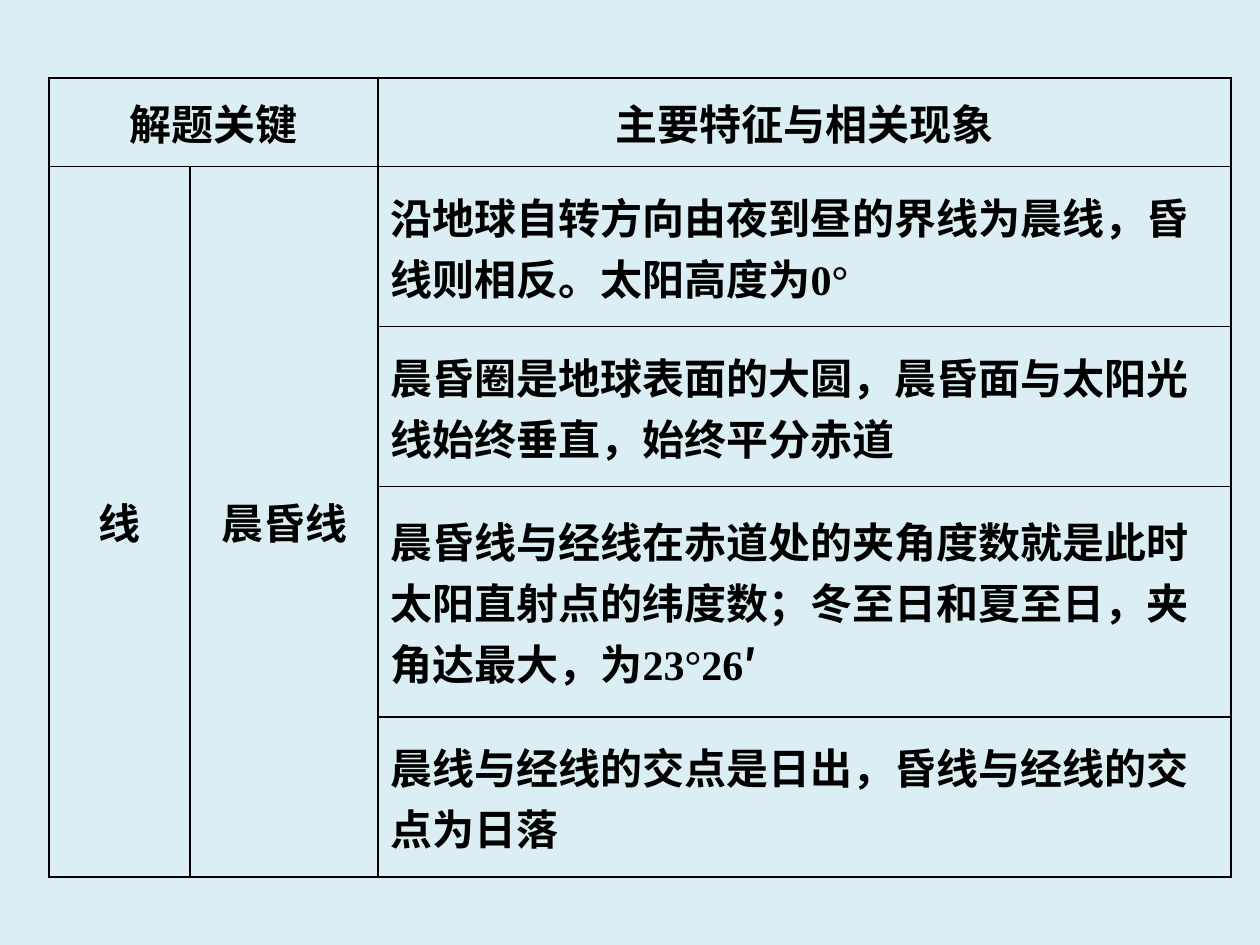
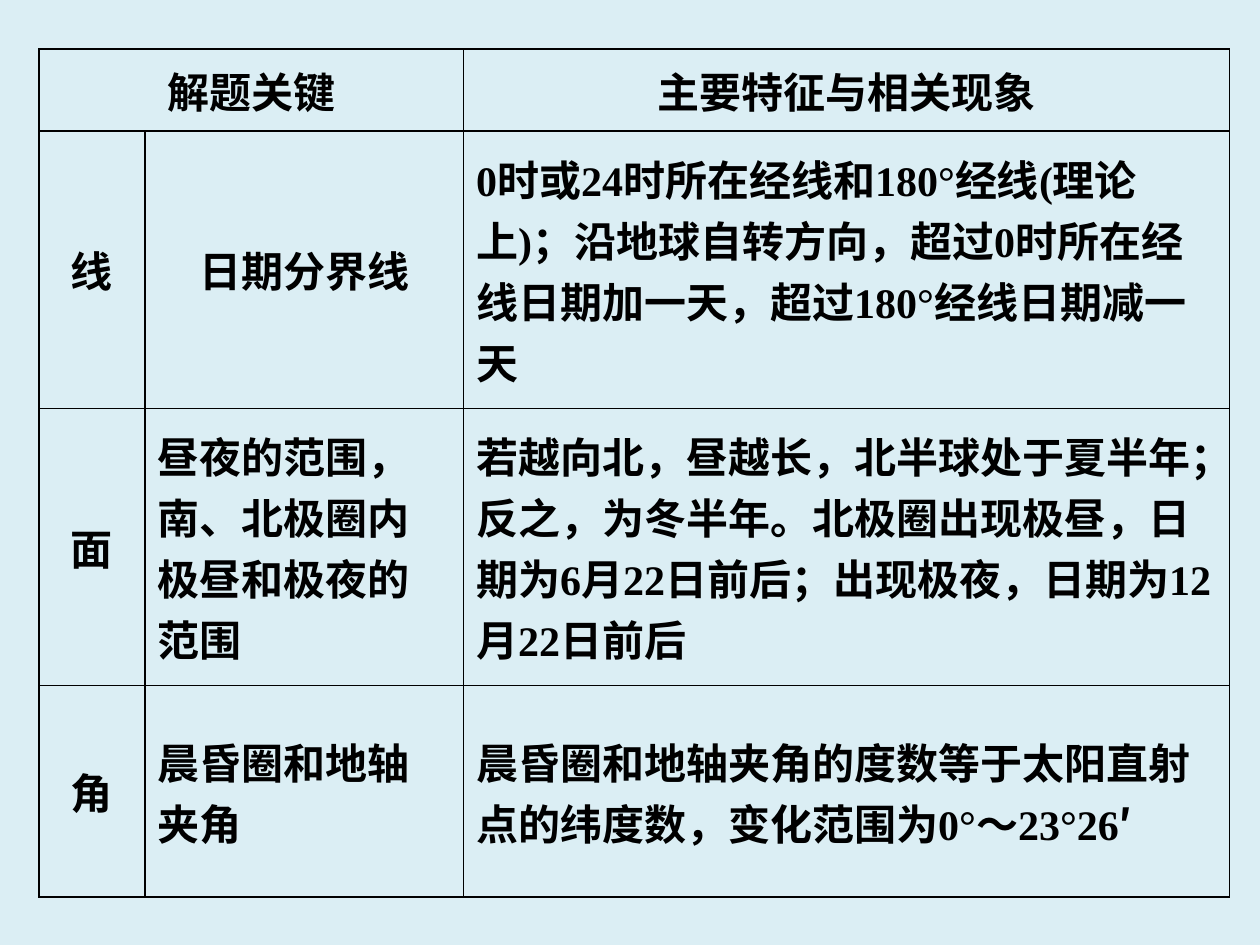
from lxml import etree
from pptx import Presentation
from pptx.dml.color import RGBColor
from pptx.enum.text import MSO_ANCHOR, PP_ALIGN
from pptx.oxml.ns import qn
from pptx.util import Emu, Pt

# Shared look
EMU_PER_PX = 9144  # 100 px to the inch
BACKGROUND = "DBEEF4"
INK = "000000"
LATIN_FONT = "Times New Roman"
CHINESE_FONT = "Noto Sans CJK SC"
TEXT_SIZE = 24
BORDER_WIDTH = 1
LABEL_LENGTH = 5  # body cells up to this many characters are centred labels
PRIME = "′"
CENTER = PP_ALIGN.CENTER
LEFT = PP_ALIGN.LEFT
MIDDLE = MSO_ANCHOR.MIDDLE

# Cells left as None are covered by a merged neighbour
HEADER = ("解题关键", None, "主要特征与相关现象")
HEADER_MERGE = ((0, 0), (0, 1))

TERMINATOR_ROWS = [
    HEADER,
    ("线", "晨昏线", "沿地球自转方向由夜到昼的界线为晨线，昏线则相反。太阳高度为0°"),
    (None, None, "晨昏圈是地球表面的大圆，晨昏面与太阳光线始终垂直，始终平分赤道"),
    (None, None, "晨昏线与经线在赤道处的夹角度数就是此时太阳直射点的纬度数；"
                 "冬至日和夏至日，夹角达最大，为23°26′"),
    (None, None, "晨线与经线的交点是日出，昏线与经线的交点为日落"),
]

DATE_LINE_ROWS = [
    HEADER,
    ("线", "日期分界线", "0时或24时所在经线和180°经线(理论上)；沿地球自转方向，"
                    "超过0时所在经线日期加一天，超过180°经线日期减一天"),
    ("面", "昼夜的范围，南、北极圈内极昼和极夜的范围",
     "若越向北，昼越长，北半球处于夏半年；反之，为冬半年。"
     "北极圈出现极昼，日期为6月22日前后；出现极夜，日期为12月22日前后"),
    ("角", "晨昏圈和地轴夹角",
     "晨昏圈和地轴夹角的度数等于太阳直射点的纬度数，变化范围为0°～23°26′"),
]


def px(length):
    return Emu(length * EMU_PER_PX)


def color(hex_string):
    return RGBColor.from_string(hex_string)


def add_slide(presentation):
    slide = presentation.slides.add_slide(presentation.slide_layouts[6])
    slide.background.fill.solid()
    slide.background.fill.fore_color.rgb = color(BACKGROUND)
    return slide


def set_borders(cell):
    properties = cell._tc.get_or_add_tcPr()
    for side in ("a:lnL", "a:lnR", "a:lnT", "a:lnB"):
        line = etree.SubElement(properties, qn(side), w=str(Pt(BORDER_WIDTH)))
        fill = etree.SubElement(line, qn("a:solidFill"))
        etree.SubElement(fill, qn("a:srgbClr"), val=INK)


def write_text(cell, text, alignment):
    paragraph = cell.text_frame.paragraphs[0]
    paragraph.alignment = alignment
    font = paragraph.font
    font.size = Pt(TEXT_SIZE)
    font.bold = True
    font.color.rgb = color(INK)
    font.name = LATIN_FONT
    defaults = paragraph._p.find(".//" + qn("a:defRPr"))
    etree.SubElement(defaults, qn("a:ea"), typeface=CHINESE_FONT)

    # The prime mark takes the Chinese font
    body, prime, _ = text.partition(PRIME)
    paragraph.add_run().text = body
    if prime:
        run = paragraph.add_run()
        run.text = prime
        run.font.name = CHINESE_FONT


def add_key_table(slide, left, top, widths, heights, rows, merges):
    frame = slide.shapes.add_table(len(heights), len(widths), px(left), px(top),
                                   px(sum(widths)), px(sum(heights)))
    table = frame.table
    table.first_row = False
    table.horz_banding = False
    for column, width in zip(table.columns, widths):
        column.width = px(width)
    for row, height in zip(table.rows, heights):
        row.height = px(height)

    for row_index, texts in enumerate(rows):
        for column_index, text in enumerate(texts):
            cell = table.cell(row_index, column_index)
            set_borders(cell)
            cell.fill.background()
            cell.vertical_anchor = MIDDLE
            if text:
                is_label = row_index == 0 or len(text) <= LABEL_LENGTH
                write_text(cell, text, CENTER if is_label else LEFT)

    for first, last in merges:
        table.cell(*first).merge(table.cell(*last))


def main():
    presentation = Presentation()
    presentation.slide_width = px(1000)
    presentation.slide_height = px(750)

    # Terminator line
    add_key_table(add_slide(presentation), 39, 62, (112, 149, 677),
                  (70, 127, 127, 183, 127), TERMINATOR_ROWS,
                  [HEADER_MERGE, ((1, 0), (4, 0)), ((1, 1), (4, 1))])

    # Date line, day and night areas, angle
    add_key_table(add_slide(presentation), 31, 39, (84, 253, 608),
                  (65, 220, 220, 168), DATE_LINE_ROWS, [HEADER_MERGE])

    presentation.save("out.pptx")


if __name__ == "__main__":
    main()
